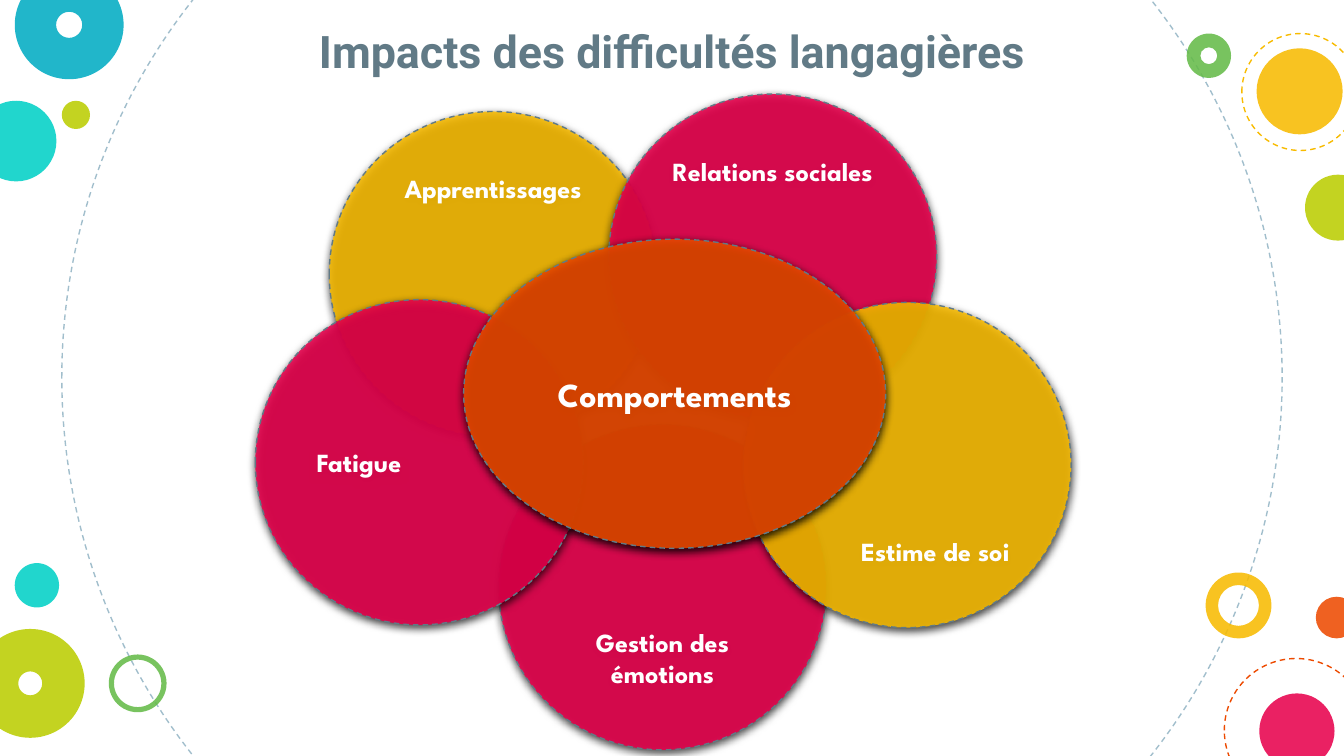
from lxml import etree
from pptx import Presentation
from pptx.dml.color import RGBColor
from pptx.enum import dml, shapes, text
from pptx.oxml import ns
from pptx.util import Inches, Pt

WHITE = RGBColor(0xFF, 0xFF, 0xFF)
SLATE = RGBColor(0x61, 0x7A, 0x86)
MIST = RGBColor(0xA1, 0xBE, 0xCC)
TURQUOISE = RGBColor(0x00, 0xD1, 0xC6)
BLUE = RGBColor(0x00, 0xAC, 0xC3)
YELLOW = RGBColor(0xF8, 0xBB, 0x00)
LIME = RGBColor(0xBB, 0xCD, 0x00)
GREEN = RGBColor(0x65, 0xBB, 0x48)
ORANGE = RGBColor(0xED, 0x4A, 0x00)
PINK = RGBColor(0xE8, 0x00, 0x4C)

PAGE_WIDTH = 10
PAGE_HEIGHT = PAGE_WIDTH * 9 / 16
OPACITY = 87
PETAL_SIZE = (2.44, 2.42)
LEFT, CENTER, RIGHT = text.PP_ALIGN.LEFT, text.PP_ALIGN.CENTER, text.PP_ALIGN.RIGHT
TOP, MIDDLE, BOTTOM = text.MSO_ANCHOR.TOP, text.MSO_ANCHOR.MIDDLE, text.MSO_ANCHOR.BOTTOM

# Decoration: left, top, diameter, colour
RINGS = [
    (0.46, -1.73, 9.08, MIST),
    (9.11, 4.9, 1.07, ORANGE),
    (9.24, 0.25, 0.87, YELLOW),
]
DOTS = [
    (-0.18, 0.75, 0.6, TURQUOISE),
    (0.46, 0.75, 0.21, LIME),
    (9.79, 4.44, 0.31, ORANGE),
    (9.37, 5.16, 0.56, PINK),
    (9.35, 0.36, 0.64, YELLOW),
    (9.71, 1.3, 0.49, LIME),
    (0.11, 4.19, 0.33, TURQUOISE),
]
# Donuts also have a band thickness
DONUTS = [
    (8.97, 4.26, 0.49, YELLOW, 0.19),
    (0.11, -0.22, 0.81, BLUE, 0.38),
    (0.81, 4.87, 0.43, GREEN, 0.09),
    (-0.18, 4.68, 0.81, LIME, 0.39),
    (8.83, 0.25, 0.33, GREEN, 0.31),
]
# Petals: label, left, top, colour, anchor, alignment, shadow opacity
PETALS = [
    ("Apprentissages", 2.45, 0.83, YELLOW, TOP, CENTER, 83),
    ("Relations sociales", 4.53, 0.7, PINK, TOP, CENTER, 79),
    ("Gestion des émotions", 3.71, 3.16, PINK, BOTTOM, CENTER, 81),
    ("Estime de soi", 5.53, 2.25, YELLOW, BOTTOM, RIGHT, 83),
    ("Fatigue", 1.9, 2.23, PINK, MIDDLE, LEFT, 84),
]


def set_alpha(color_parent, percent):
    color = color_parent.find(".//" + ns.qn("a:srgbClr"))
    etree.SubElement(color, ns.qn("a:alpha"), val=str(percent * 1000))


def add_round(page, left, top, width, height, fill=None, line=None, band=None):
    """Add an ellipse, or a donut when a band thickness is given."""
    kind = shapes.MSO_SHAPE.DONUT if band else shapes.MSO_SHAPE.OVAL
    shape = page.shapes.add_shape(
        kind, Inches(left), Inches(top), Inches(width), Inches(height))
    shape.shadow.inherit = False
    if band:
        shape.adjustments[0] = band
    if fill is None:
        shape.fill.background()
    else:
        shape.fill.solid()
        shape.fill.fore_color.rgb = fill
        set_alpha(shape.element.spPr.find(ns.qn("a:solidFill")), OPACITY)
    if line is None:
        shape.line.fill.background()
    else:
        shape.line.color.rgb = line
        shape.line.width = Pt(0.75)
        shape.line.dash_style = dml.MSO_LINE.DASH
    return shape


def add_shadow(shape, percent):
    effects = shape.element.spPr.find(ns.qn("a:effectLst"))
    shadow = etree.SubElement(
        effects, ns.qn("a:outerShdw"), blurRad=str(Pt(4.5)), dist=str(Pt(1.5)),
        dir=str(90 * 60000), algn="bl", rotWithShape="0")
    etree.SubElement(shadow, ns.qn("a:srgbClr"), val="000000")
    set_alpha(shadow, percent)


def write(shape, words, font, size, color, anchor=MIDDLE, align=CENTER):
    frame = shape.text_frame
    frame.word_wrap = True
    frame.auto_size = text.MSO_AUTO_SIZE.NONE
    frame.vertical_anchor = anchor
    frame.margin_left = frame.margin_right = Inches(0.1)
    frame.margin_top = frame.margin_bottom = Inches(0.1)
    para = frame.paragraphs[0]
    para.alignment = align
    span = para.add_run()
    span.text = words
    span.font.name = font
    span.font.size = Pt(size)
    span.font.bold = True
    span.font.color.rgb = color


def add_bubble(page, words, box, fill, shadow, size=14, **placing):
    bubble = add_round(page, *box, fill=fill, line=SLATE)
    add_shadow(bubble, shadow)
    write(bubble, words, "League Spartan", size, WHITE, **placing)


def add_decoration(page):
    for left, top, size, color in RINGS:
        add_round(page, left, top, size, size, line=color)
    for left, top, size, color in DOTS:
        add_round(page, left, top, size, size, fill=color)
    for left, top, size, color, band in DONUTS:
        add_round(page, left, top, size, size, fill=color, band=band)


def set_title(page, words):
    title = page.shapes.title
    title.left, title.top = Inches(1.87), Inches(-0.02)
    title.width, title.height = Inches(6.34), Inches(0.7)
    write(title, words, "Roboto", 24, SLATE, anchor=BOTTOM)


def main():
    deck = Presentation()
    deck.slide_width, deck.slide_height = Inches(PAGE_WIDTH), Inches(PAGE_HEIGHT)
    page = deck.slides.add_slide(deck.slide_layouts[5])

    set_title(page, "Impacts des difficultés langagières ")
    add_decoration(page)

    # Petals first, so that the centre lies on top of them
    for words, left, top, color, anchor, align, shadow in PETALS:
        add_bubble(page, words, (left, top, *PETAL_SIZE), color, shadow,
                   anchor=anchor, align=align)
    add_bubble(page, "Comportements", (3.45, 1.78, 3.14, 2.3), ORANGE, 100, size=18)

    deck.save("out.pptx")


if __name__ == "__main__":
    main()
